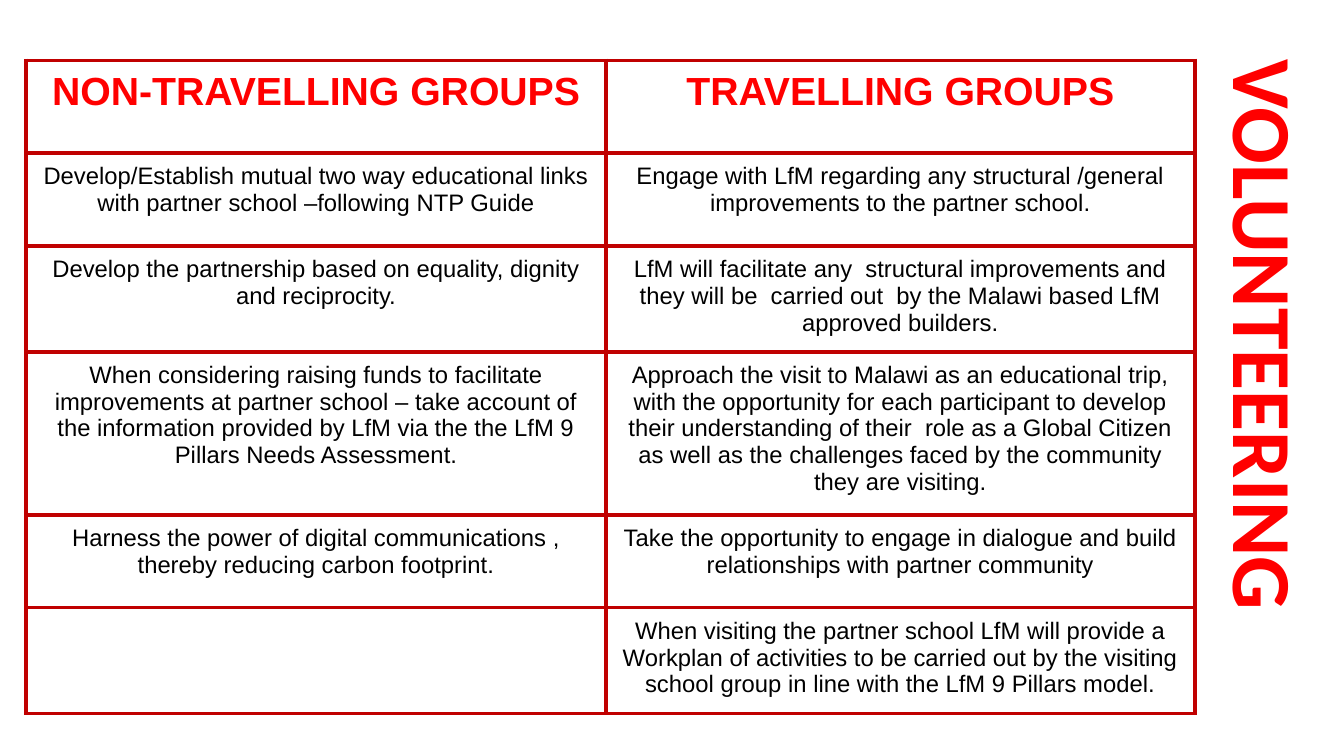
import pptx
import pptx.util
import pptx.dml.color
import pptx.enum.text
import pptx.oxml
import pptx.oxml.ns

Inches = pptx.util.Inches
Pt = pptx.util.Pt
Align = pptx.enum.text.PP_ALIGN
Anchor = pptx.enum.text.MSO_ANCHOR

HUES = {"head": "FF0000", "body": "000000", "rule": "C00000", "paper": "FFFFFF"}

ROWS = [
    ("NON-TRAVELLING GROUPS", "TRAVELLING GROUPS"),
    ("Develop/Establish mutual two way educational links with partner school "
     "–following NTP Guide",
     "Engage with LfM regarding any structural /general improvements to the "
     "partner school."),
    ("Develop the partnership based on equality, dignity and reciprocity.",
     "LfM will facilitate any  structural improvements and they will be  "
     "carried out  by the Malawi based LfM approved builders."),
    ("When considering raising funds to facilitate improvements at partner "
     "school – take account of the information provided by LfM via the the "
     "LfM 9 Pillars Needs Assessment.",
     "Approach the visit to Malawi as an educational trip, with the "
     "opportunity for each participant to develop their understanding of "
     "their  role as a Global Citizen as well as the challenges faced by the "
     "community they are visiting."),
    ("Harness the power of digital communications , thereby reducing carbon "
     "footprint.",
     "Take the opportunity to engage in dialogue and build relationships with "
     "partner community"),
    ("",
     "When visiting the partner school LfM will provide a Workplan of "
     "activities to be carried out by the visiting school group in line with "
     "the LfM 9 Pillars model."),
]
WIDTHS = [5.75, 5.84]
HEIGHTS = [0.92, 0.92, 0.96, 0.96, 0.92, 0.92]


def color(name):
    return pptx.dml.color.RGBColor.from_string(HUES[name])


def write(frame, text, size=17, hue="body", bold=False, font="Arial",
          align=Align.CENTER, space=1.0):
    para = frame.paragraphs[0]
    para.alignment = align
    para.line_spacing = space
    if not text:
        para.font.size = Pt(size)
        return
    run = para.add_run()
    run.text = text
    run.font.size = Pt(size)
    run.font.name = font
    run.font.bold = bold
    run.font.color.rgb = color(hue)


class Page:
    def __init__(self, deck):
        self.slide = deck.slides.add_slide(deck.slide_layouts[6])
        self.pad = Inches(0.1)
        self.rule = Pt(3)

    def title(self, text, left, top, width, height):
        box = self.slide.shapes.add_textbox(
            Inches(left), Inches(top), Inches(width), Inches(height))
        box.rotation = 90
        box.line.color.rgb = color("paper")
        box.line.width = Pt(1.5)
        frame = box.text_frame
        frame.word_wrap = True
        frame.vertical_anchor = Anchor.BOTTOM
        write(frame, text, size=60, hue="head", bold=True, font="Calibri",
              align=Align.LEFT, space=0.9)

    def border(self, cell):
        props = cell._tc.get_or_add_tcPr()
        for side in "LRTB":
            props.append(pptx.oxml.parse_xml(
                f'<a:ln{side} {pptx.oxml.ns.nsdecls("a")} w="{self.rule}">'
                f'<a:solidFill><a:srgbClr val="{HUES["rule"]}"/></a:solidFill>'
                f'</a:ln{side}>'))

    def table(self, rows, left, top, widths, heights):
        grid = self.slide.shapes.add_table(
            len(rows), len(widths), Inches(left), Inches(top),
            Inches(sum(widths)), Inches(sum(heights))).table
        grid.horz_banding = False
        for col, width in zip(grid.columns, widths):
            col.width = Inches(width)
        for row, height in zip(grid.rows, heights):
            row.height = Inches(height)
        for i, texts in enumerate(rows):
            style = dict(size=28, hue="head", bold=True) if i == 0 else {}
            for j, text in enumerate(texts):
                cell = grid.cell(i, j)
                cell.margin_left = cell.margin_right = self.pad
                cell.margin_top = cell.margin_bottom = self.pad
                # Borders come before the fill in the cell properties
                self.border(cell)
                cell.fill.solid()
                cell.fill.fore_color.rgb = color("paper")
                write(cell.text_frame, text, **style)


def main():
    deck = pptx.Presentation()
    deck.slide_width = Inches(13.33)
    deck.slide_height = Inches(7.5)
    page = Page(deck)

    # Vertical title on the right
    page.title("VOLUNTEERING", 9.61, 2.89, 5.85, 1.06)

    # Guidance for the two kinds of group
    page.table(ROWS, 0.26, 0.6, WIDTHS, HEIGHTS)

    deck.save("out.pptx")


if __name__ == "__main__":
    main()
